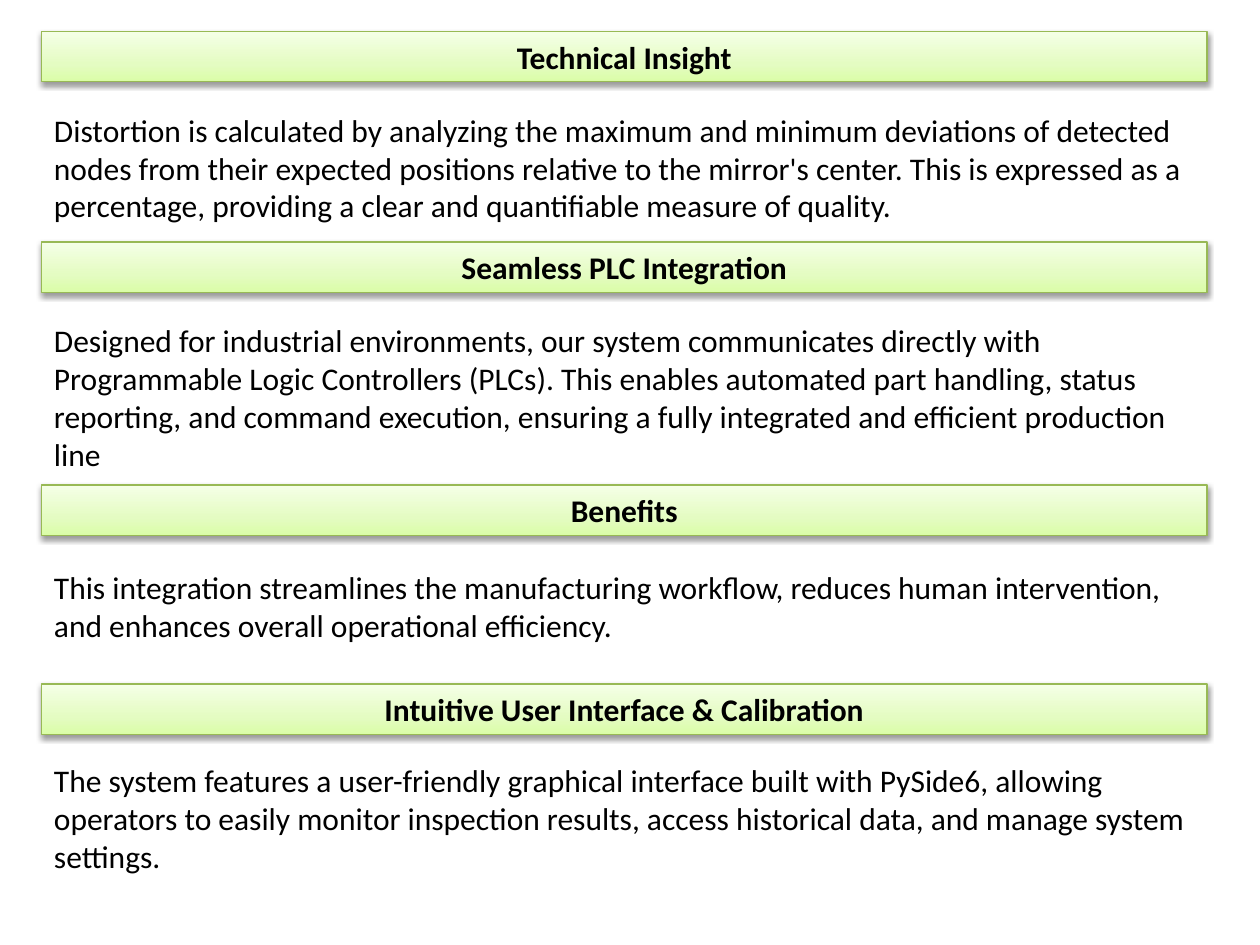
from pptx import Presentation
from pptx.dml.color import RGBColor
from pptx.enum.shapes import MSO_SHAPE as SHAPE
from pptx.enum.text import MSO_ANCHOR as ANCHOR, MSO_AUTO_SIZE as AUTO, PP_ALIGN as ALIGN
from pptx.oxml import parse_xml
from pptx.oxml.ns import nsdecls
from pptx.util import Inches, Pt

COLORS = {
    "text": "000000",
    "line": "98B955",
    "shadow": "000000",
    "bar_bottom": "DAFDA7",
    "bar_middle": "E4FCC2",
    "bar_top": "F5FFE7",
}
BAR_STOPS = [(0, "bar_bottom"), (35, "bar_middle"), (100, "bar_top")]

LEFT, WIDTH, BAR_HEIGHT = 0.33, 9.25, 0.4

# Heading, bar top, body top, body width, body height, body text
SECTIONS = [
    ("Technical Insight", 0.25, 0.83, WIDTH, 1.01,
     "Distortion is calculated by analyzing the maximum and minimum deviations of "
     "detected nodes from their expected positions relative to the mirror's center. "
     "This is expressed as a percentage, providing a clear and quantifiable measure "
     "of quality."),
    ("Seamless PLC Integration", 1.92, 2.5, WIDTH, 1.31,
     "Designed for industrial environments, our system communicates directly with "
     "Programmable Logic Controllers (PLCs). This enables automated part handling, "
     "status reporting, and command execution, ensuring a fully integrated and "
     "efficient production line"),
    ("Benefits", 3.85, 4.46, 9.33, 0.71,
     "This integration streamlines the manufacturing workflow, reduces human "
     "intervention, and enhances overall operational efficiency."),
    ("Intuitive User Interface & Calibration", 5.43, 5.99, WIDTH, 1.01,
     "The system features a user-friendly graphical interface built with PySide6, "
     "allowing operators to easily monitor inspection results, access historical "
     "data, and manage system settings."),
]


class SlideBuilder:
    def __init__(self, slide, font="Calibri", size=18):
        self.slide, self.font, self.size = slide, font, size

    def set_text(self, sp, text, bold=False, align=ALIGN.LEFT, anchor=ANCHOR.TOP):
        tf = sp.text_frame
        tf.text = text
        tf.word_wrap = True
        tf.auto_size = AUTO.SHAPE_TO_FIT_TEXT
        tf.vertical_anchor = anchor
        p = tf.paragraphs[0]
        p.alignment = align
        font = p.runs[0].font
        font.name, font.size, font.bold = self.font, Pt(self.size), bold
        font.color.rgb = RGBColor.from_string(COLORS["text"])

    def heading_bar(self, text, top):
        sp = self.slide.shapes.add_shape(
            SHAPE.RECTANGLE, Inches(LEFT), Inches(top), Inches(WIDTH), Inches(BAR_HEIGHT))
        sp.line.color.rgb = RGBColor.from_string(COLORS["line"])
        sp.line.width = Pt(0.75)

        # Three-stop gradient, running upwards
        stops = "".join(
            f'<a:gs pos="{pos * 1000}"><a:srgbClr val="{COLORS[name]}"/></a:gs>'
            for pos, name in BAR_STOPS)
        spPr = sp._element.spPr
        spPr.insert(2, parse_xml(
            f'<a:gradFill {nsdecls("a")} rotWithShape="1"><a:gsLst>{stops}</a:gsLst>'
            f'<a:lin ang="{270 * 60000}" scaled="0"/></a:gradFill>'))

        # Soft shadow below the bar
        spPr.append(parse_xml(
            f'<a:effectLst {nsdecls("a")}><a:outerShdw blurRad="{Pt(3.1)}" '
            f'dist="{Pt(1.6)}" dir="{90 * 60000}" rotWithShape="0">'
            f'<a:srgbClr val="{COLORS["shadow"]}"><a:alpha val="38000"/></a:srgbClr>'
            f'</a:outerShdw></a:effectLst>'))
        self.set_text(sp, text, bold=True, align=ALIGN.CENTER, anchor=ANCHOR.MIDDLE)

    def body_text(self, text, top, width, height):
        sp = self.slide.shapes.add_textbox(
            Inches(LEFT), Inches(top), Inches(width), Inches(height))
        self.set_text(sp, text)


def main():
    prs = Presentation()
    prs.slide_width, prs.slide_height = Inches(10), Inches(7.5)
    builder = SlideBuilder(prs.slides.add_slide(prs.slide_layouts[6]))

    # Each section is a heading bar with a paragraph below it
    for heading, bar_top, body_top, width, height, body in SECTIONS:
        builder.heading_bar(heading, bar_top)
        builder.body_text(body, body_top, width, height)

    prs.save("out.pptx")


if __name__ == "__main__":
    main()
